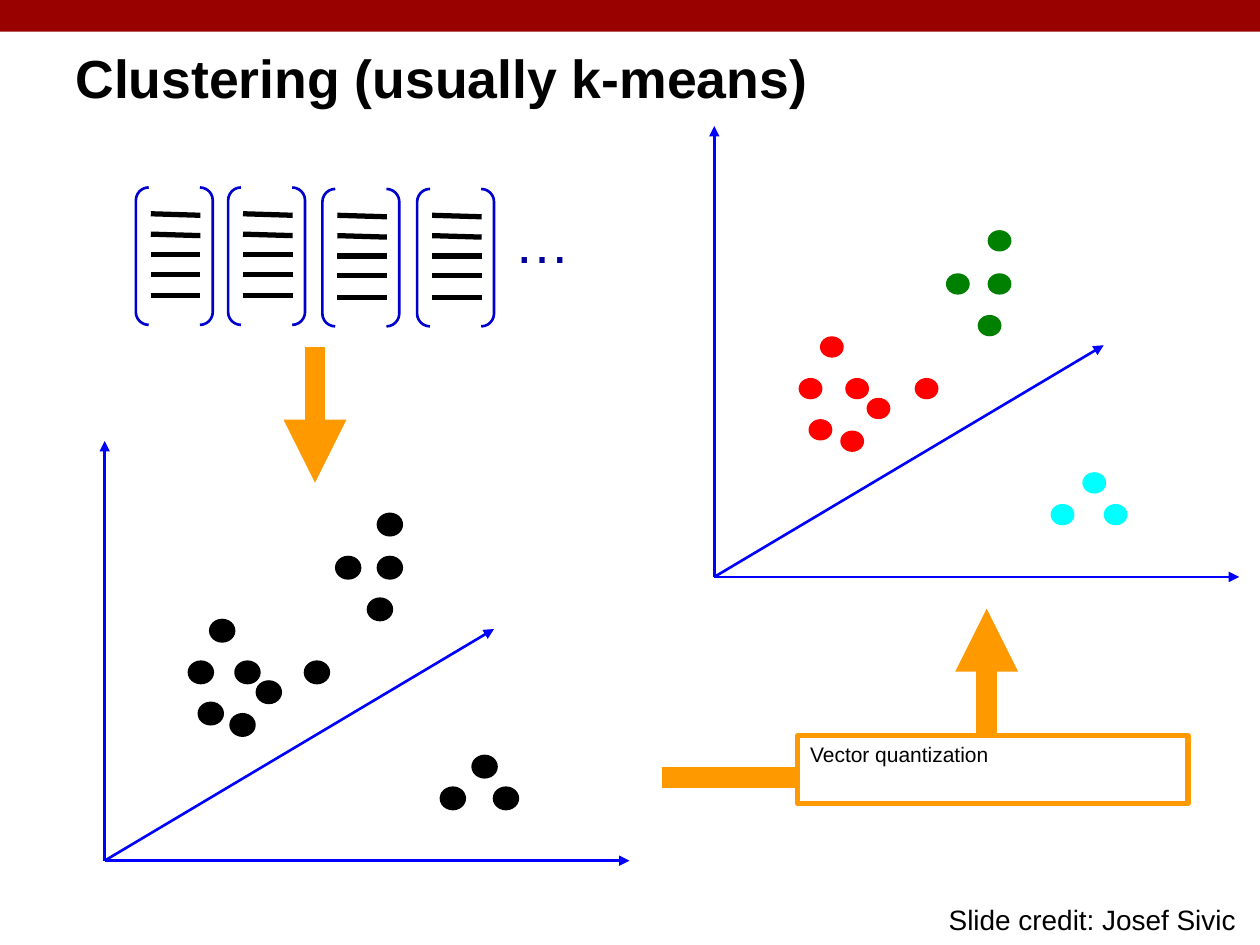
"""Build a slide showing descriptor vectors clustered by k-means."""
from dataclasses import dataclass

from lxml.etree import SubElement
from pptx import Presentation
from pptx.dml.color import RGBColor
from pptx.enum.shapes import MSO_CONNECTOR, MSO_SHAPE
from pptx.enum.text import MSO_ANCHOR, PP_ALIGN
from pptx.oxml.ns import qn
from pptx.util import Cm, Pt

BLACK = RGBColor(0x00, 0x00, 0x00)
WHITE = RGBColor(0xFF, 0xFF, 0xFF)
MAROON = RGBColor(0x99, 0x00, 0x00)
BLUE = RGBColor(0x00, 0x00, 0xFF)
BRACKET_BLUE = RGBColor(0x00, 0x00, 0xCC)
NAVY = RGBColor(0x00, 0x00, 0x99)
ORANGE = RGBColor(0xFF, 0x99, 0x00)
RED = RGBColor(0xFF, 0x00, 0x00)
GREEN = RGBColor(0x00, 0x80, 0x00)
CYAN = RGBColor(0x00, 0xFF, 0xFF)


@dataclass(frozen=True)
class Cluster:
    color: RGBColor
    dots: tuple[tuple[float, float], ...]


@dataclass(frozen=True)
class Plot:
    left: float
    bottom: float
    height: float
    colored: bool


CLUSTERS = (
    Cluster(RED, ((2.64, 4.01), (3.07, 3.61), (1.7, 4.01), (2.54, 2.95),
                  (1.9, 3.18), (4.04, 4.01), (2.13, 4.85))),
    Cluster(GREEN, ((5.51, 6.99), (5.31, 5.28), (4.67, 6.12), (5.51, 6.12))),
    Cluster(CYAN, ((7.85, 1.47), (7.42, 2.11), (6.78, 1.47))),
)
PLOTS = (Plot(2.11, 17.35, 8.46, False), Plot(14.4, 11.63, 9.09, True))
VECTORS = ((2.74, 3.78), (4.6, 3.78), (6.5, 3.81), (8.41, 3.81))
ENTRY_ROWS = ((0.53, 0.03), (0.94, 0.03), (1.35, 0), (1.75, 0), (2.18, 0))


def add_line(page, start: tuple[float, float], end: tuple[float, float],
             color: RGBColor, width: float, arrow: bool = False) -> None:
    line = page.shapes.add_connector(
        MSO_CONNECTOR.STRAIGHT, *(Cm(value) for value in (*start, *end)))
    line.line.color.rgb = color
    line.line.width = Pt(width)
    properties = line._element.spPr
    if arrow:
        SubElement(properties.find(qn("a:ln")), qn("a:tailEnd"), type="triangle")
    SubElement(properties, qn("a:effectLst"))


def add_box(page, kind: MSO_SHAPE, frame: tuple[float, float, float, float],
            fill: RGBColor | None = None, outline: RGBColor | None = None,
            width: float = 1.5):
    box = page.shapes.add_shape(kind, *(Cm(value) for value in frame))
    box.shadow.inherit = False
    if fill is None:
        box.fill.background()
    else:
        box.fill.solid()
        box.fill.fore_color.rgb = fill
    if outline is None:
        box.line.fill.background()
    else:
        box.line.color.rgb = outline
        box.line.width = Pt(width)
    return box


def write(box, text: str, *, size: float, color: RGBColor = BLACK,
          bold: bool = False, align: PP_ALIGN = PP_ALIGN.LEFT,
          anchor: MSO_ANCHOR = MSO_ANCHOR.TOP, wrap: bool = True) -> None:
    frame = box.text_frame
    frame.word_wrap = wrap
    frame.vertical_anchor = anchor
    para = frame.paragraphs[0]
    para.alignment = align
    span = para.add_run()
    span.text = text
    span.font.name = "Arial"
    span.font.size = Pt(size)
    span.font.bold = bold
    span.font.color.rgb = color


def add_text(page, text: str, frame: tuple[float, float, float, float],
             **style) -> None:
    write(page.shapes.add_textbox(*(Cm(value) for value in frame)), text, **style)


def add_vector(page, left: float, top: float) -> None:
    bracket = add_box(page, MSO_SHAPE.DOUBLE_BRACKET, (left, top, 1.55, 2.77),
                      outline=BRACKET_BLUE)
    bracket.adjustments[0] = 0.167
    for offset, drop in ENTRY_ROWS:
        row = top + offset
        add_line(page, (left + 0.3, row), (left + 1.3, row + drop), BLACK, 3)


def add_plot(page, plot: Plot) -> None:
    origin = (plot.left, plot.bottom)
    for across, up in ((0, plot.height), (10.58, 0), (7.85, 4.67)):
        end = (plot.left + across, plot.bottom - up)
        add_line(page, origin, end, BLUE, 1.5, arrow=True)
    for cluster in CLUSTERS:
        fill = cluster.color if plot.colored else BLACK
        outline = None if plot.colored else BLACK
        for across, up in cluster.dots:
            frame = (plot.left + across, plot.bottom - up, 0.48, 0.43)
            add_box(page, MSO_SHAPE.OVAL, frame, fill, outline)


def main() -> None:
    deck = Presentation()
    deck.slide_width, deck.slide_height = Cm(25.4), Cm(19.05)
    page = deck.slides.add_slide(deck.slide_layouts[6])

    add_box(page, MSO_SHAPE.RECTANGLE, (0, 0, 25.4, 0.64), MAROON)
    add_text(page, "Clustering (usually k-means)", (1.27, 0.76, 22.86, 1.57),
             size=30.6, bold=True, anchor=MSO_ANCHOR.MIDDLE)
    for left, top in VECTORS:
        add_vector(page, left, top)
    add_text(page, "…", (10.11, 4.06, 1.65, 1.6), size=32, color=NAVY,
             align=PP_ALIGN.CENTER, wrap=False)
    for plot in PLOTS:
        add_plot(page, plot)

    add_line(page, (6.35, 6.99), (6.35, 9.73), ORANGE, 12, arrow=True)
    add_line(page, (13.34, 15.67), (19.05, 15.67), ORANGE, 12)
    add_line(page, (19.89, 15.67), (19.89, 12.27), ORANGE, 12, arrow=True)
    step = add_box(page, MSO_SHAPE.RECTANGLE, (16.08, 14.83, 7.87, 1.37),
                   WHITE, ORANGE, 3)
    write(step, "Vector quantization", size=12)
    add_text(page, "Slide credit: Josef Sivic", (18.87, 18.06, 6.3, 0.94),
             size=16, align=PP_ALIGN.CENTER, wrap=False)
    deck.save("out.pptx")


if __name__ == "__main__":
    main()
